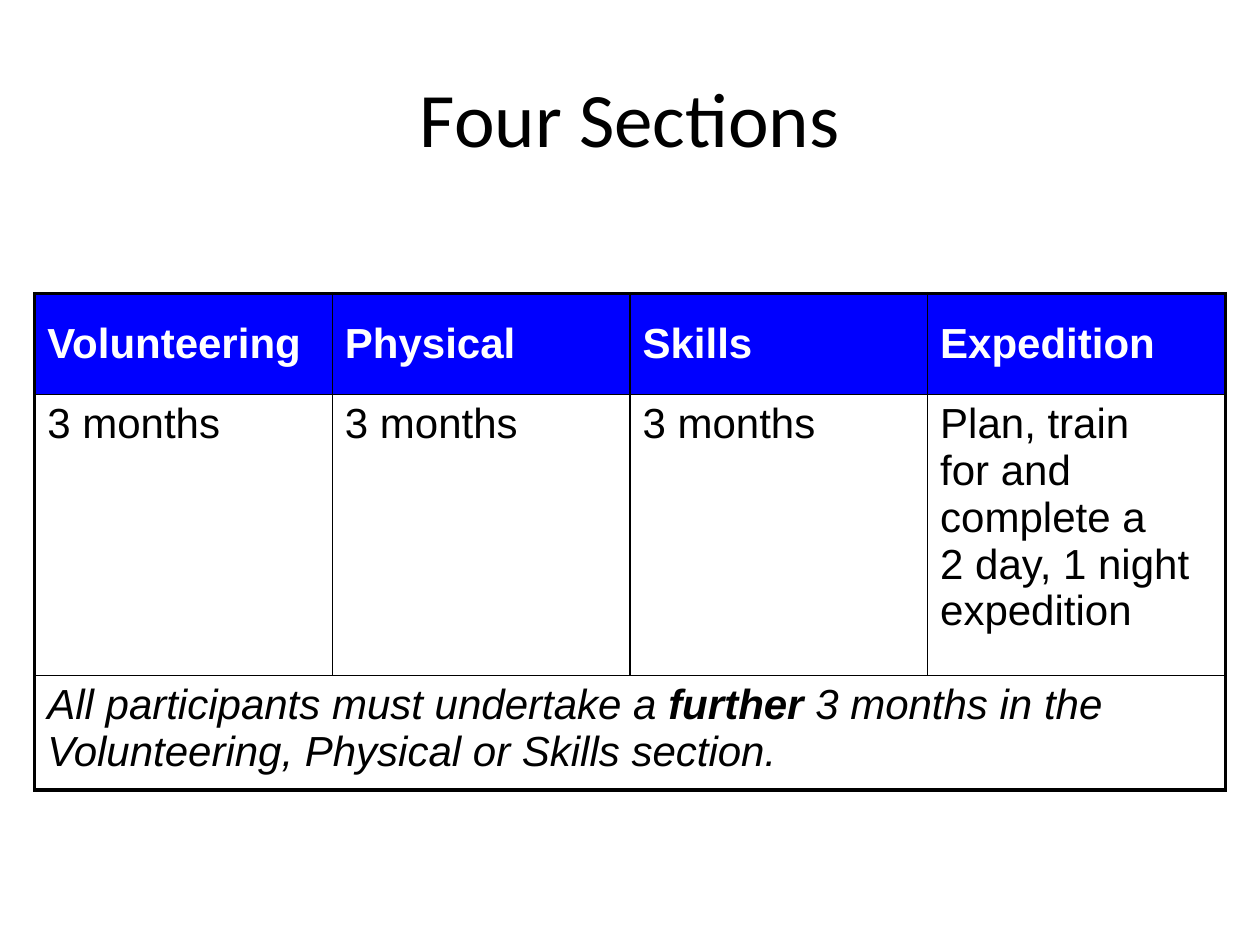
from lxml.etree import SubElement
from pptx import Presentation
from pptx.dml.color import RGBColor
from pptx.enum.text import MSO_ANCHOR, PP_ALIGN
from pptx.oxml.ns import qn
from pptx.util import Cm, Pt

BLACK = RGBColor(0x00, 0x00, 0x00)
WHITE = RGBColor(0xFF, 0xFF, 0xFF)
BLUE = RGBColor(0x00, 0x00, 0xFF)

SECTIONS = {
    "Volunteering": "3 months",
    "Physical": "3 months",
    "Skills": "3 months",
    "Expedition": "Plan, train \nfor and complete a \n2 day, 1 night expedition",
}
NOTE = [
    ("All participants must undertake a ", False),
    ("further ", True),
    ("3 months in the Volunteering, Physical or Skills section.", False),
]


class SectionsSlide:
    title_font, table_font = "Calibri", "Arial"
    title_size, table_size = Pt(44), Pt(24)
    outer_line, inner_line = Pt(2.25), Pt(1)

    def __init__(self, presentation):
        self.slide = presentation.slides.add_slide(presentation.slide_layouts[5])

    def style_run(self, run, font, size, color, bold=False, italic=False):
        run.font.name, run.font.size = font, size
        run.font.bold, run.font.italic = bold, italic
        run.font.color.rgb = color

    def add_title(self, text):
        title = self.slide.shapes.title
        title.left, title.top = Cm(1.27), Cm(0.76)
        title.width, title.height = Cm(22.86), Cm(3.18)
        title.fill.solid()
        title.fill.fore_color.rgb = WHITE
        title.line.fill.background()
        title.text_frame.text = text
        title.text_frame.vertical_anchor = MSO_ANCHOR.MIDDLE
        paragraph = title.text_frame.paragraphs[0]
        paragraph.alignment = PP_ALIGN.CENTER
        self.style_run(paragraph.runs[0], self.title_font, self.title_size, BLACK)

    def add_sections_table(self, sections, note):
        column_width, row_heights = Cm(6), [Cm(2.03), Cm(5.67), Cm(2.31)]
        columns = len(sections)
        table = self.slide.shapes.add_table(
            len(row_heights), columns, Cm(0.7), Cm(5.92),
            column_width * columns, sum(row_heights)).table
        table.first_row = table.horz_banding = False
        for column in table.columns:
            column.width = column_width
        for row, height in zip(table.rows, row_heights):
            row.height = height

        for index, (heading, requirement) in enumerate(sections.items()):
            self.fill_cell(table.cell(0, index), [(heading, True)], WHITE, BLUE)
            table.cell(0, index).vertical_anchor = MSO_ANCHOR.MIDDLE
            self.fill_cell(table.cell(1, index), [(requirement, False)])
        note_cell = table.cell(2, 0)
        note_cell.merge(table.cell(2, columns - 1))
        self.fill_cell(note_cell, note, italic=True)
        self.draw_borders(table)

    def fill_cell(self, cell, parts, color=BLACK, background=None, italic=False):
        if background is None:
            cell.fill.background()
        else:
            cell.fill.solid()
            cell.fill.fore_color.rgb = background
        paragraph = cell.text_frame.paragraphs[0]
        for text, bold in parts:
            if len(parts) == 1:
                paragraph.text = text
                runs = paragraph.runs
            else:
                runs = [paragraph.add_run()]
                runs[0].text = text
            for run in runs:
                self.style_run(run, self.table_font, self.table_size, color, bold, italic)

    def draw_borders(self, table):
        """Rule every cell, with a heavier line around the whole table."""
        last_row, last_column = len(table.rows) - 1, len(table.columns) - 1
        for row in range(last_row + 1):
            for column in range(last_column + 1):
                cell = table.cell(row, column)
                if cell.is_spanned:
                    continue
                span = cell.span_width if cell.is_merge_origin else 1
                on_edge = {
                    "a:lnL": column == 0,
                    "a:lnR": column + span - 1 == last_column,
                    "a:lnT": row == 0,
                    "a:lnB": row == last_row,
                }
                properties = cell._tc.get_or_add_tcPr()
                for position, (side, outer) in enumerate(on_edge.items()):
                    width = self.outer_line if outer else self.inner_line
                    line = SubElement(properties, qn(side), w=str(int(width)))
                    fill = SubElement(line, qn("a:solidFill"))
                    SubElement(fill, qn("a:srgbClr"), val=str(BLACK))
                    properties.insert(position, line)


def main():
    presentation = Presentation()
    presentation.slide_width, presentation.slide_height = Cm(25.4), Cm(19.05)
    page = SectionsSlide(presentation)
    page.add_title("Four Sections")
    page.add_sections_table(SECTIONS, NOTE)
    presentation.save("out.pptx")


if __name__ == "__main__":
    main()
